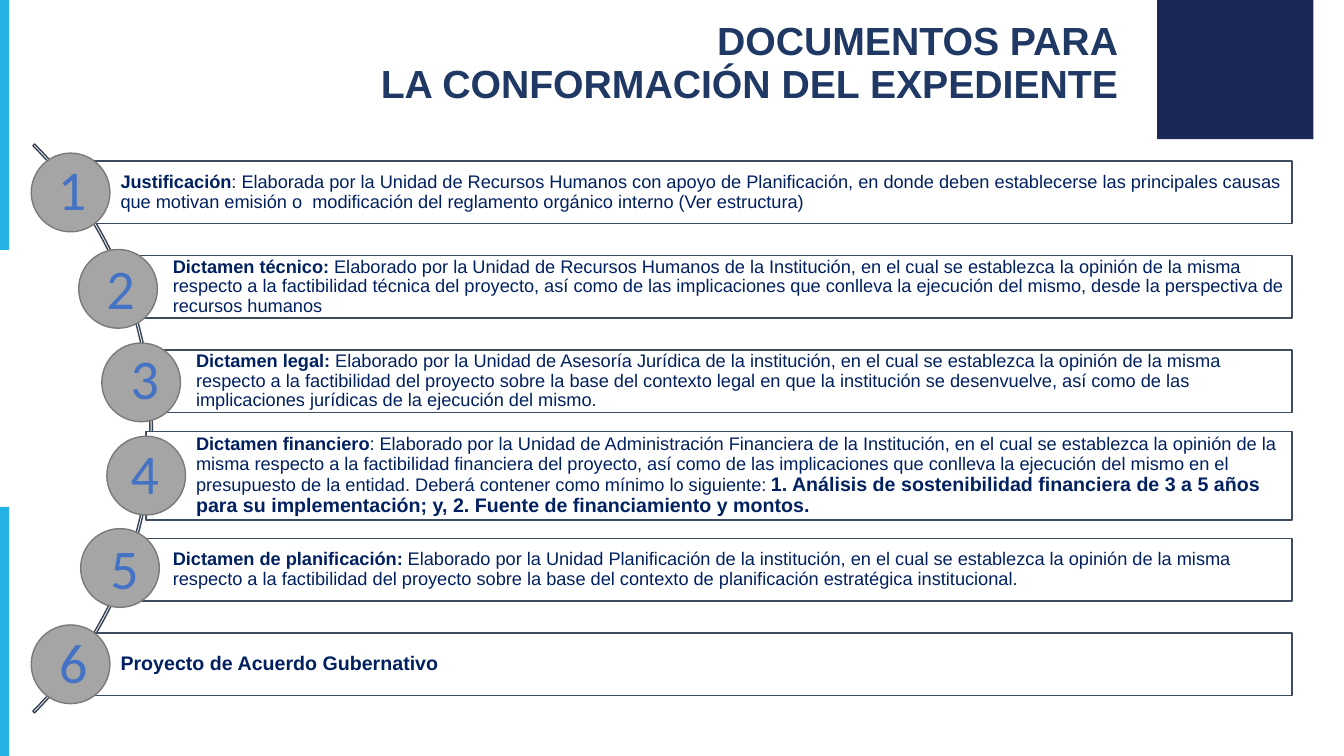
from pptx import Presentation
from pptx.dml.color import RGBColor
from pptx.enum.shapes import MSO_SHAPE
from pptx.enum.text import MSO_ANCHOR, PP_ALIGN
from pptx.util import Pt

RECTANGLE, OVAL, ARC = MSO_SHAPE.RECTANGLE, MSO_SHAPE.OVAL, MSO_SHAPE.BLOCK_ARC
MIDDLE, TOP = MSO_ANCHOR.MIDDLE, MSO_ANCHOR.TOP
LEFT, CENTER, RIGHT = PP_ALIGN.LEFT, PP_ALIGN.CENTER, PP_ALIGN.RIGHT

COLORS = {
    "banner": "192854", "stripe": "23B2E3", "arc": "364355",
    "box": "FFFFFF", "box_line": "3E4C60",
    "circle": "A5A5A5", "circle_line": "7A7A7A",
    "title": "203864", "body": "002060", "digit": "4472C4",
}

TITLE = ["DOCUMENTOS PARA", "LA CONFORMACIÓN DEL EXPEDIENTE"]

DOCUMENTS = [
    [("Justificación", 13, True),
     (": Elaborada por la Unidad de Recursos Humanos con apoyo de Planificación, en donde deben "
      "establecerse las principales causas que motivan emisión o  modificación del reglamento "
      "orgánico interno (Ver estructura)", 13, False)],
    [("Dictamen técnico:", 13, True),
     (" Elaborado por la Unidad de Recursos Humanos de la Institución, en el cual se establezca la "
      "opinión de la misma respecto a la factibilidad técnica del proyecto, así como de las "
      "implicaciones que conlleva la ejecución del mismo, desde la perspectiva de recursos humanos",
      13, False)],
    [("Dictamen legal:", 13, True),
     (" Elaborado por la Unidad de Asesoría Jurídica de la institución, en el cual se establezca la "
      "opinión de la misma respecto a la factibilidad del proyecto sobre la base del contexto legal "
      "en que la institución se desenvuelve, así como de las implicaciones jurídicas de la ejecución "
      "del mismo.", 13, False)],
    [("Dictamen financiero", 13, True),
     (": Elaborado por la Unidad de Administración Financiera de la Institución, en el cual se "
      "establezca la opinión de la misma respecto a la factibilidad financiera del proyecto, así "
      "como de las implicaciones que conlleva la ejecución del mismo en el presupuesto de la "
      "entidad. Deberá contener como mínimo lo siguiente: ", 13, False),
     ("1. Análisis de sostenibilidad financiera de 3 a 5 años para su implementación; y, "
      "2. Fuente de financiamiento y montos.", 14, True)],
    [("Dictamen de planificación:", 13, True),
     (" Elaborado por la Unidad Planificación de la institución, en el cual se establezca la opinión "
      "de la misma respecto a la factibilidad del proyecto sobre la base del contexto de "
      "planificación estratégica institucional.", 13, False)],
    [("Proyecto de Acuerdo Gubernativo", 14, True)],
]

BOX_LEFTS = [50.4, 87.8, 104.4, 104.4, 87.8, 50.4]
BOX_HEIGHTS = [44.8, 44.8, 44.8, 63.4, 44.8, 44.8]
CIRCLE_LEFTS = [22.3, 56.2, 72.7, 76.3, 57.6, 22.3]
CIRCLE_SHIFTS = [0, 1.4, 0.8, 0, -1.4, 0]
DIGIT_PLACES = [(33.8, 106.6), (68.4, 177.8), (85.7, 241.9),
                (85.7, 309.6), (71.3, 377.3), (34.6, 445)]
FIRST_MIDDLE, ROW_STEP, BOX_RIGHT, DIAMETER = 137.5, 67.4, 923, 56.2

STRIPES = [(-2, -6, 8.4, 184.5), (-2, 362, 8.4, 184.5)]
BANNER = (826.6, -21.6, 111.6, 121)
ARC_PLACE, ARC_ANGLES = (-465.8, 18.7, 574.6, 574.6), (189, 27, 0.003)
BOX_TEXT = {"vertical_anchor": MIDDLE, "word_wrap": True, "margin_left": Pt(35.7),
            "margin_right": Pt(2.7), "margin_top": Pt(2.7), "margin_bottom": Pt(2.7)}
TITLE_TEXT = {"vertical_anchor": MIDDLE, "word_wrap": True}
DIGIT_TEXT = {"vertical_anchor": TOP, "word_wrap": False}


def set_all(target, values):
    for name, value in values.items():
        setattr(target, name, value)


def add_figure(page, kind, place, fill=None, line=None):
    figure = page.shapes.add_shape(kind, *map(Pt, place))
    figure.shadow.inherit = False
    for paint, color in ((figure.fill, fill), (figure.line.fill, line)):
        if color:
            paint.solid()
            paint.fore_color.rgb = RGBColor.from_string(COLORS[color])
        else:
            paint.background()
    if line:
        figure.line.width = Pt(1)
    return figure


def write(box, paragraphs, frame_format, para_format, font, color):
    frame = box.text_frame
    set_all(frame, frame_format)
    for index, spans in enumerate(paragraphs):
        para = frame.add_paragraph() if index else frame.paragraphs[0]
        set_all(para, para_format)
        for text, size, bold in spans:
            span = para.add_run()
            span.text = text
            set_all(span.font, {"name": font, "size": Pt(size), "bold": bold})
            span.font.color.rgb = RGBColor.from_string(COLORS[color])


def main():
    deck = Presentation()
    set_all(deck, {"slide_width": Pt(960), "slide_height": Pt(540)})
    page = deck.slides.add_slide(deck.slide_layouts[6])

    add_figure(page, RECTANGLE, BANNER, "banner")
    for place in STRIPES:
        add_figure(page, RECTANGLE, place, "stripe")
    arc = add_figure(page, ARC, ARC_PLACE, line="arc")
    for index, angle in enumerate(ARC_ANGLES):
        arc.adjustments[index] = angle

    for row, spans in enumerate(DOCUMENTS):
        middle = FIRST_MIDDLE + ROW_STEP * row
        left, height = BOX_LEFTS[row], BOX_HEIGHTS[row]
        place = (left, middle - height / 2, BOX_RIGHT - left, height)
        box = add_figure(page, RECTANGLE, place, "box", "box_line")
        write(box, [spans], BOX_TEXT, {"alignment": LEFT, "line_spacing": 0.9}, "Arial", "body")
        top = middle + CIRCLE_SHIFTS[row] - DIAMETER / 2
        add_figure(page, OVAL, (CIRCLE_LEFTS[row], top, DIAMETER, DIAMETER),
                   "circle", "circle_line")

    title = page.shapes.add_textbox(Pt(6.5), Pt(-2.9), Pt(799.2), Pt(97.9))
    write(title, [[(line, 28, True)] for line in TITLE], TITLE_TEXT,
          {"alignment": RIGHT, "line_spacing": 0.9}, "Arial", "title")

    for number, (left, top) in enumerate(DIGIT_PLACES, 1):
        digit = page.shapes.add_textbox(Pt(left), Pt(top), Pt(35.3), Pt(55.4))
        write(digit, [[(str(number), 40, False)]], DIGIT_TEXT,
              {"alignment": CENTER}, "Calibri", "digit")

    deck.save("out.pptx")


if __name__ == "__main__":
    main()
